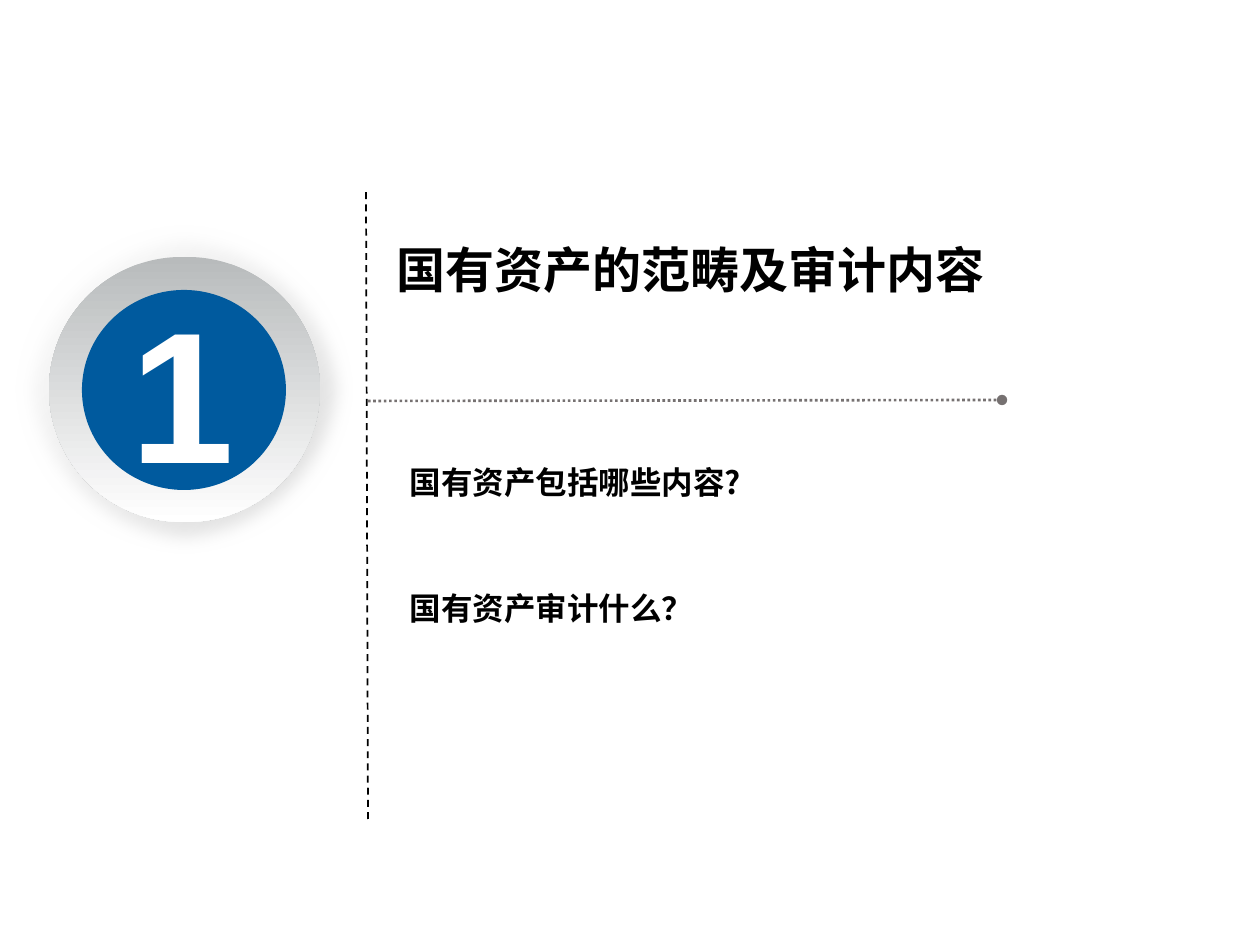
from typing import NamedTuple

import pptx
import pptx.dml.color
import pptx.enum.dml
import pptx.enum.shapes
import pptx.oxml
import pptx.oxml.ns
import pptx.util

SCALE = 914400 / 126
COLORS = {
    "black": "000000",
    "white": "FFFFFF",
    "blue": "005A9E",
    "rim": "B8BBBC",
    "halo": "D9D9D9",
    "gray": "767171",
}
NS = pptx.oxml.ns.nsdecls("a")
SHAPE = pptx.enum.shapes.MSO_SHAPE
DASH = pptx.enum.dml.MSO_LINE


class Disc(NamedTuple):
    kind: SHAPE
    box: tuple[int, int, int, int]
    fill: tuple[str, ...]


class Label(NamedTuple):
    box: tuple[int, int, int, int]
    lines: tuple[str, ...]
    size: float
    font: str
    color: str = "black"
    pitch: int | None = None
    pads: tuple[int, int, int, int] = (13, 6, 13, 6)


class Rule(NamedTuple):
    start: tuple[int, int]
    end: tuple[int, int]
    color: str
    width: float
    dash: DASH


DISCS = [
    Disc(SHAPE.OVAL, (15, 224, 339, 331), ("halo", "white")),
    Disc(SHAPE.ROUNDED_RECTANGLE, (49, 257, 271, 265), ("rim", "white")),
    Disc(SHAPE.OVAL, (82, 290, 204, 200), ("blue",)),
]
RULES = [
    Rule((368, 819), (366, 190), "black", 1, DASH.DASH),
    Rule((368, 401), (1002, 400), "gray", 1.5, DASH.ROUND_DOT),
]
LABELS = [
    Label((397, 228, 810, 141), ("国有资产的范畴及审计内容",), 28, "Arial",
          pitch=40, pads=(0, 0, 0, 0)),
    Label((117, 271, 135, 237), ("1",), 106.7, "Arial", "white"),
    Label((397, 432, 670, 265), ("国有资产包括哪些内容?", "国有资产审计什么？"),
          18, "Noto Sans CJK SC", pitch=36),
]


def px(num: int) -> pptx.util.Emu:
    return pptx.util.Emu(round(num * SCALE))


def rgb(name: str) -> pptx.dml.color.RGBColor:
    return pptx.dml.color.RGBColor.from_string(COLORS[name])


def add_disc(slide, disc: Disc):
    shape = slide.shapes.add_shape(disc.kind, *map(px, disc.box))
    shape.shadow.inherit = False
    shape.line.fill.background()
    if disc.kind == SHAPE.ROUNDED_RECTANGLE:
        shape.adjustments[0] = 0.5
    if len(disc.fill) == 1:
        shape.fill.solid()
        shape.fill.fore_color.rgb = rgb(disc.fill[0])
    else:
        shape.fill.gradient()
        shape.fill.gradient_angle = 270
        for stop, name in zip(shape.fill.gradient_stops, disc.fill):
            stop.color.rgb = rgb(name)
    return shape


def soften(shape) -> None:
    """Make the gradient radial from the lower right and blur the edge."""
    props = shape.element.spPr
    lin = props.find(".//" + pptx.oxml.ns.qn("a:lin"))
    lin.getparent().replace(lin, pptx.oxml.parse_xml(
        f'<a:path {NS} path="circle"><a:fillToRect l="100000" t="100000"/></a:path>'))
    props.find(pptx.oxml.ns.qn("a:effectLst")).append(
        pptx.oxml.parse_xml(f'<a:softEdge {NS} rad="127000"/>'))


def add_rule(slide, rule: Rule):
    line = slide.shapes.add_connector(
        pptx.enum.shapes.MSO_CONNECTOR.STRAIGHT,
        *map(px, rule.start + rule.end))
    line.line.color.rgb = rgb(rule.color)
    line.line.width = pptx.util.Pt(rule.width)
    line.line.dash_style = rule.dash
    line.element.spPr.append(pptx.oxml.parse_xml(f"<a:effectLst {NS}/>"))
    return line


def add_label(slide, label: Label) -> None:
    frame = slide.shapes.add_textbox(*map(px, label.box)).text_frame
    frame.word_wrap = True
    (frame.margin_left, frame.margin_top,
     frame.margin_right, frame.margin_bottom) = map(px, label.pads)
    for num, text in enumerate(label.lines):
        para = frame.paragraphs[0] if num == 0 else frame.add_paragraph()
        para.text = text
        if label.pitch:
            para.line_spacing = pptx.util.Pt(label.pitch)
            if num:
                para.space_before = pptx.util.Pt(label.pitch)
        font = para.font
        font.name = label.font
        font.size = pptx.util.Pt(label.size)
        font.bold = True
        font.color.rgb = rgb(label.color)
        latin = para._p.find(".//" + pptx.oxml.ns.qn("a:latin"))
        latin.addnext(pptx.oxml.parse_xml(
            f'<a:ea {NS} typeface="Noto Sans CJK SC"/>'))


def main() -> None:
    deck = pptx.Presentation()
    deck.slide_width, deck.slide_height = px(1260), px(945)
    slide = deck.slides.add_slide(deck.slide_layouts[6])
    halo, *_ = [add_disc(slide, disc) for disc in DISCS]
    soften(halo)
    *_, branch = [add_rule(slide, rule) for rule in RULES]
    branch.element.spPr.find(pptx.oxml.ns.qn("a:ln")).append(
        pptx.oxml.parse_xml(f'<a:tailEnd {NS} type="oval"/>'))
    for label in LABELS:
        add_label(slide, label)
    deck.save("out.pptx")


if __name__ == "__main__":
    main()
